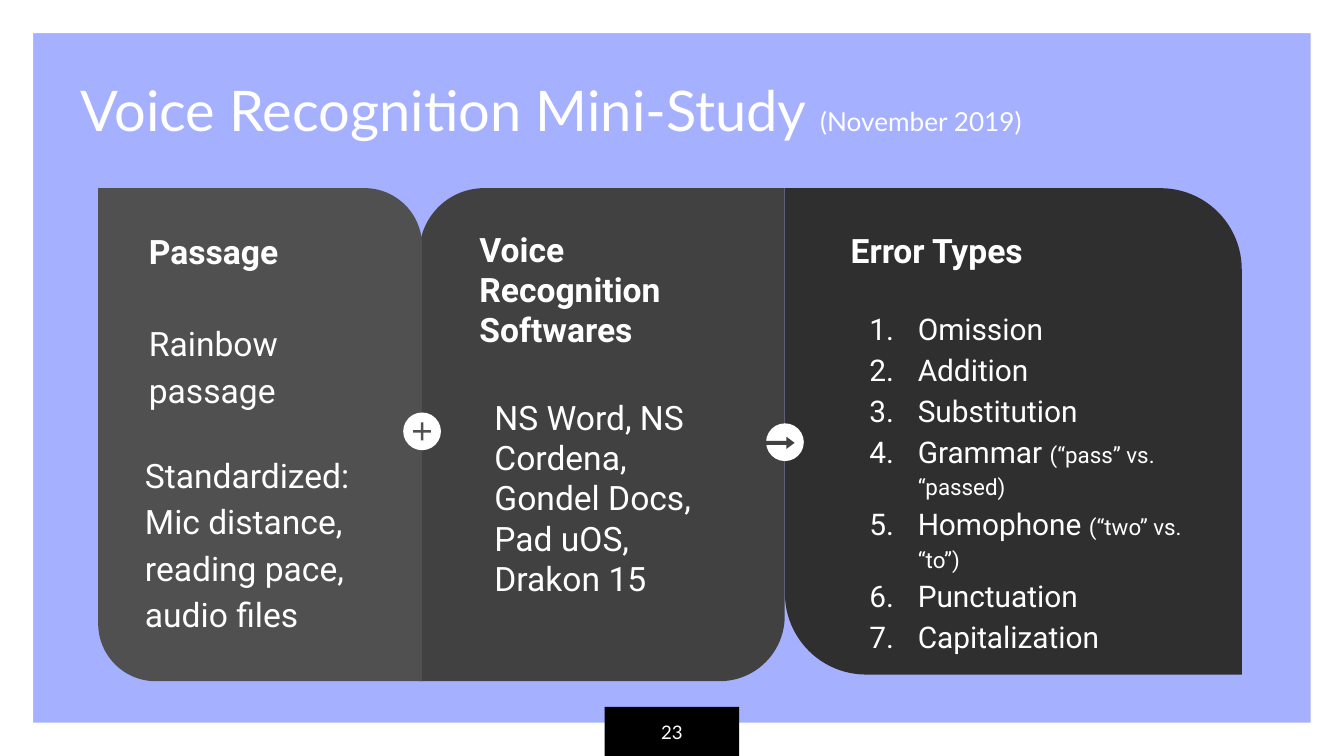
from lxml.etree import SubElement
from pptx import Presentation
from pptx.dml.color import RGBColor
from pptx.enum.shapes import MSO_SHAPE as SHAPE
from pptx.enum.text import MSO_ANCHOR as ANCHOR, MSO_AUTO_SIZE as AUTO_SIZE, PP_ALIGN as ALIGN
from pptx.oxml.ns import qn
from pptx.util import Pt

WHITE = RGBColor(0xFF, 0xFF, 0xFF)
BLACK = RGBColor(0x00, 0x00, 0x00)
LAVENDER = RGBColor(0xA5, 0xB0, 0xFE)
LIGHT_GRAY = RGBColor(0x50, 0x50, 0x50)
MID_GRAY = RGBColor(0x41, 0x41, 0x41)
DARK_GRAY = RGBColor(0x2F, 0x2F, 0x2F)

# Content: boxes are (left, top, width, height) in points
SLIDE_WIDTH, SLIDE_HEIGHT = 720, 405
PAGE_NUMBER = "23"
TITLE = [("Voice Recognition Mini-Study ", 30), ("(November 2019)", 14)]
TITLE_BOX = (36, 29.5, 602.6, 54)
PANEL_TOP = 100.8
ROUNDING = 0.178

# Panels in drawing order; corners are (top left + bottom right, top right + bottom left)
PANELS = [
    {"left": 224.6, "width": 195.8, "height": 264.2, "fill": MID_GRAY,
     "corners": (ROUNDING, 0),
     "heading": ("Voice Recognition Softwares", (249.8, 115.2, 146.2, 77)),
     "bodies": [("NS Word, NS Cordena, Gondel Docs, Pad uOS, Drakon 15",
                 (257.8, 205.2, 130.3, 126), 1.0)]},
    {"left": 52.6, "width": 173.5, "height": 264.2, "fill": LIGHT_GRAY,
     "corners": (0, ROUNDING),
     "heading": ("Passage", (72.7, 116.6, 129.6, 33.1)),
     "bodies": [("Rainbow passage", (72.7, 162.7, 129.6, 58.3), 1.15),
                ("Standardized: Mic distance, reading pace, audio files",
                 (70.6, 233.3, 129.6, 58.3), 1.15)]},
    {"left": 420.5, "width": 244.8, "height": 260.6, "fill": DARK_GRAY,
     "corners": (0, ROUNDING),
     "heading": ("Error Types", (448.6, 115.9, 205.2, 76.3)),
     "bodies": []},
]

# Each error type is a name and an optional example
ERROR_TYPES = [
    ("Omission", ""), ("Addition", ""), ("Substitution", ""),
    ("Grammar ", "(“pass” vs. “passed)"), ("Homophone ", "(“two” vs. “to”)"),
    ("Punctuation", ""), ("Capitalization", ""),
]
ERROR_BOX = (448.6, 156.2, 197.3, 146.9)

# Badges: disc left and top, then the symbol, its box, adjustments and colour
DISC_SIZE = 20.2
BADGES = [
    (410.4, 226.8, SHAPE.RIGHT_ARROW, (409.9, 234, 15.8, 6.5), (0.32, 0.67), MID_GRAY),
    (216, 221, SHAPE.MATH_PLUS, (219.6, 224.6, 13, 13), (0.099,), LIGHT_GRAY),
]


def add_filled(slide, kind, box, fill, adjustments=()):
    shape = slide.shapes.add_shape(kind, *map(Pt, box))
    shape.shadow.inherit = False
    shape.fill.solid()
    shape.fill.fore_color.rgb = fill
    shape.line.fill.background()
    for index, value in enumerate(adjustments):
        shape.adjustments[index] = value
    return shape


def prepare_frame(frame):
    frame.word_wrap = True
    frame.auto_size = AUTO_SIZE.NONE
    frame.margin_left = frame.margin_right = Pt(7.2)
    frame.margin_top = frame.margin_bottom = Pt(7.2)
    return frame


def set_font(font, name, size, bold=False):
    font.name, font.size, font.bold = name, Pt(size), bold
    font.color.rgb = WHITE


def add_text(slide, text, box, bold=False, spacing=1.0):
    frame = prepare_frame(slide.shapes.add_textbox(*map(Pt, box)).text_frame)
    paragraph = frame.paragraphs[0]
    paragraph.text = text
    paragraph.line_spacing = spacing
    set_font(paragraph.font, "Roboto", 18, bold)


def number_paragraph(paragraph):
    properties = paragraph._p.get_or_add_pPr()
    properties.set("marL", str(Pt(36)))
    properties.set("indent", str(Pt(-25.9)))
    color = SubElement(properties, qn("a:buClr"))
    SubElement(color, qn("a:srgbClr"), val=str(WHITE))
    SubElement(properties, qn("a:buAutoNum"), type="arabicPeriod")


def add_error_types(slide):
    frame = prepare_frame(slide.shapes.add_textbox(*map(Pt, ERROR_BOX)).text_frame)
    for index, (name, example) in enumerate(ERROR_TYPES):
        paragraph = frame.add_paragraph() if index else frame.paragraphs[0]
        number_paragraph(paragraph)
        paragraph.line_spacing = 1.15
        set_font(paragraph.font, "Roboto", 16)
        paragraph.add_run().text = name
        if example:
            run = paragraph.add_run()
            run.text = example
            run.font.size = Pt(12)


def add_title(slide):
    title = slide.shapes.title
    title.left, title.top, title.width, title.height = map(Pt, TITLE_BOX)
    frame = prepare_frame(title.text_frame)
    frame.vertical_anchor = ANCHOR.BOTTOM
    paragraph = frame.paragraphs[0]
    paragraph.alignment = ALIGN.LEFT
    for text, size in TITLE:
        run = paragraph.add_run()
        run.text = text
        set_font(run.font, "Lato", size)


def main():
    presentation = Presentation()
    presentation.slide_width, presentation.slide_height = Pt(SLIDE_WIDTH), Pt(SLIDE_HEIGHT)
    slide = presentation.slides.add_slide(presentation.slide_layouts[5])
    slide.background.fill.solid()
    slide.background.fill.fore_color.rgb = LAVENDER

    # White border and page number tab
    add_filled(slide, SHAPE.FRAME, (0, 0, SLIDE_WIDTH, SLIDE_HEIGHT), WHITE, (0.044,))
    tab = add_filled(slide, SHAPE.RECTANGLE, (324, 378.7, 72, 26.6), BLACK)
    frame = prepare_frame(tab.text_frame)
    frame.vertical_anchor = ANCHOR.MIDDLE
    number = frame.paragraphs[0]
    number.text = PAGE_NUMBER
    number.alignment = ALIGN.CENTER
    set_font(number.font, "Lato", 10)

    add_title(slide)

    # Panels with their headings and texts
    for panel in PANELS:
        box = (panel["left"], PANEL_TOP, panel["width"], panel["height"])
        add_filled(slide, SHAPE.ROUND_2_DIAG_RECTANGLE, box, panel["fill"], panel["corners"])
        add_text(slide, *panel["heading"], bold=True)
        for text, text_box, spacing in panel["bodies"]:
            add_text(slide, text, text_box, spacing=spacing)
    add_error_types(slide)

    # Badges between the panels
    for left, top, symbol, symbol_box, adjustments, color in BADGES:
        add_filled(slide, SHAPE.OVAL, (left, top, DISC_SIZE, DISC_SIZE), WHITE)
        add_filled(slide, symbol, symbol_box, color, adjustments)

    presentation.save("out.pptx")


if __name__ == "__main__":
    main()
